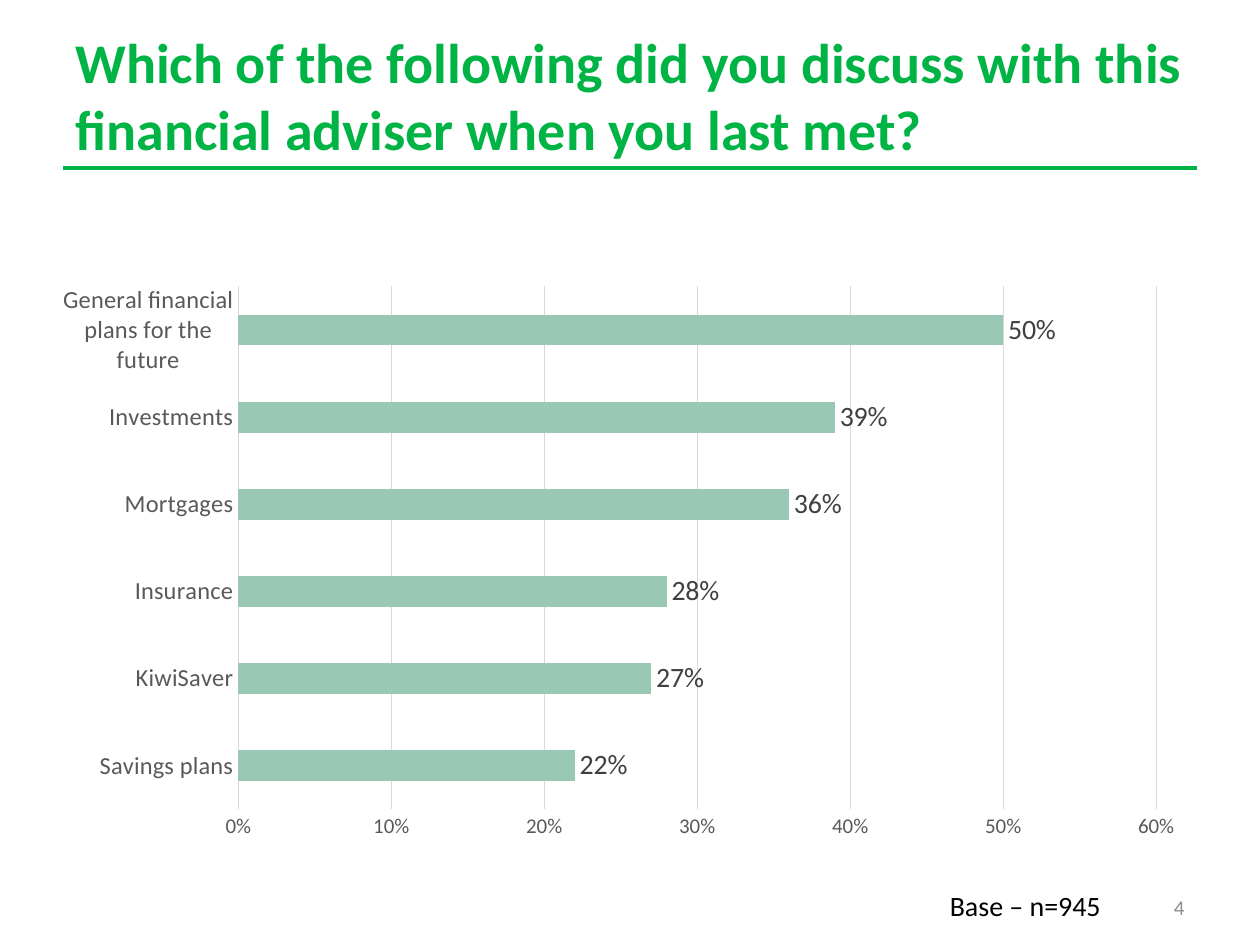
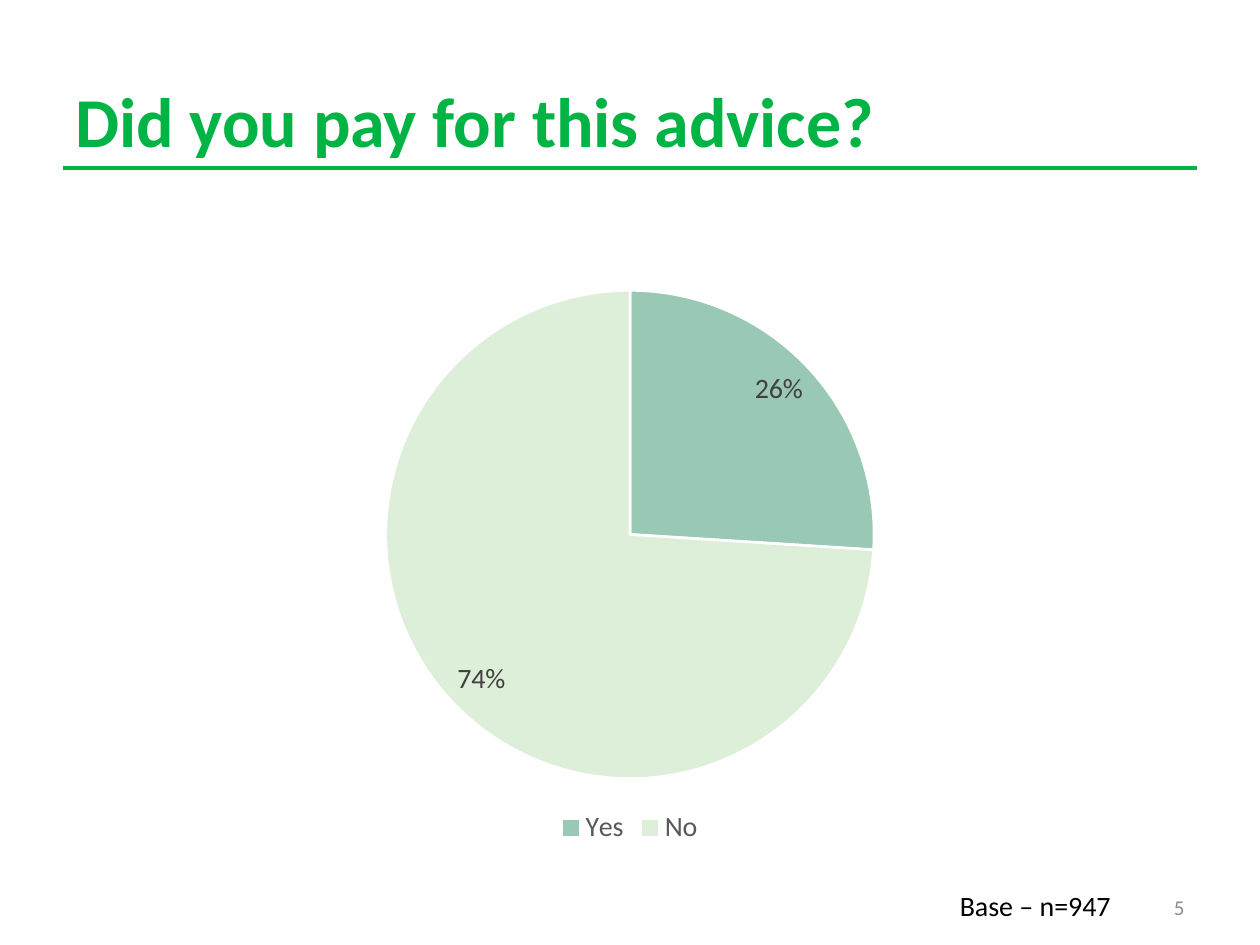
from dataclasses import dataclass

from lxml import etree
from pptx import Presentation
from pptx.chart.data import CategoryChartData
from pptx.dml.color import RGBColor
from pptx.enum.chart import XL_CHART_TYPE, XL_LABEL_POSITION, XL_LEGEND_POSITION, XL_TICK_MARK
from pptx.enum.shapes import MSO_CONNECTOR
from pptx.enum.text import MSO_ANCHOR, MSO_AUTO_SIZE, PP_ALIGN
from pptx.oxml.ns import qn
from pptx.util import Pt

BAR, PIE = XL_CHART_TYPE.BAR_CLUSTERED, XL_CHART_TYPE.PIE
OUTSIDE_END, INSIDE_END = XL_LABEL_POSITION.OUTSIDE_END, XL_LABEL_POSITION.INSIDE_END
LEGEND_BOTTOM = XL_LEGEND_POSITION.BOTTOM
NO_TICK = XL_TICK_MARK.NONE
STRAIGHT = MSO_CONNECTOR.STRAIGHT
TOP, MIDDLE, BOTTOM = MSO_ANCHOR.TOP, MSO_ANCHOR.MIDDLE, MSO_ANCHOR.BOTTOM
LEFT, RIGHT = PP_ALIGN.LEFT, PP_ALIGN.RIGHT
GROW = MSO_AUTO_SIZE.SHAPE_TO_FIT_TEXT


@dataclass(frozen=True)
class Theme:
    font: str = "Calibri"
    green: str = "00B345"
    sage: str = "99C8B4"
    mint: str = "DDEED9"
    grid: str = "D9D9D9"
    axis_text: str = "595959"
    label_text: str = "404040"
    number_text: str = "8C8C8C"
    black: str = "000000"
    white: str = "FFFFFF"
    category_size: int = 14
    label_size: int = 16
    small_size: int = 12


THEME = Theme()
PERCENT = "0%"

# Boxes as left, top, width, height in points
TITLE_BOX = (36, 21.6, 648, 74.4)
CHART_BOX = (36, 156, 648, 330)
NUMBER_BOX = (516, 504, 168, 28.8)
BASE_TOP, BASE_WIDTH, BASE_HEIGHT = 504, 102, 26.6


def points(box):
    return [Pt(value) for value in box]


def set_attributes(target, formats):
    for name, value in formats.items():
        setattr(target, name, value)


def style_font(font, size, color, bold=False):
    set_attributes(font, {"name": THEME.font, "size": Pt(size), "bold": bold})
    font.color.rgb = RGBColor.from_string(color)


def style_line(line, color, width):
    line.color.rgb = RGBColor.from_string(color)
    line.width = Pt(width)


def fill_solid(fill, color):
    fill.solid()
    fill.fore_color.rgb = RGBColor.from_string(color)


def add_text(slide, box, text, size, color, bold=False, align=LEFT, **frame_formats):
    frame = slide.shapes.add_textbox(*points(box)).text_frame
    set_attributes(frame, {"word_wrap": True, "vertical_anchor": TOP, **frame_formats})
    paragraph = frame.paragraphs[0]
    paragraph.alignment = align
    run = paragraph.add_run()
    run.text = text
    style_font(run.font, size, color, bold)


def add_header(slide, box, title, size):
    """Green title standing on a rule along the bottom of its box."""
    left, top, width, height = box
    rule = slide.shapes.add_connector(
        STRAIGHT, *points((left, top + height, left + width, top + height)))
    style_line(rule.line, THEME.green, 2.5)
    etree.SubElement(rule._element.spPr, qn("a:effectLst"))
    add_text(slide, box, title, size, THEME.green, bold=True, vertical_anchor=BOTTOM)


def add_footer(slide, number, base, base_left):
    """Slide number at the right, sample base beside it."""
    add_text(slide, NUMBER_BOX, str(number), THEME.small_size, THEME.number_text,
             align=RIGHT, vertical_anchor=MIDDLE)
    add_text(slide, (base_left, BASE_TOP, BASE_WIDTH, BASE_HEIGHT), base,
             THEME.label_size, THEME.black, word_wrap=False, auto_size=GROW)


def add_percent_chart(slide, box, kind, shares, label_position):
    """Chart of one series of shares, with a percentage on each."""
    data = CategoryChartData(number_format=PERCENT)
    data.categories = list(shares)
    data.add_series("Series 1", list(shares.values()))
    chart = slide.shapes.add_chart(kind, *points(box), data).chart
    set_attributes(chart, {"has_title": False, "has_legend": False})
    style_font(chart.font, 10, THEME.black)
    plot = chart.plots[0]
    plot.has_data_labels = True
    set_attributes(plot.data_labels, {
        "show_value": True, "show_percentage": False, "number_format": PERCENT,
        "number_format_is_linked": False, "position": label_position})
    style_font(plot.data_labels.font, THEME.label_size, THEME.label_text)
    return chart


def add_bar_chart(slide, box, shares):
    chart = add_percent_chart(slide, box, BAR, shares, OUTSIDE_END)
    set_attributes(chart.plots[0], {"gap_width": 182, "vary_by_categories": False})
    fill_solid(chart.plots[0].series[0].format.fill, THEME.sage)

    # Axes
    no_ticks = {"major_tick_mark": NO_TICK, "minor_tick_mark": NO_TICK}
    category_axis, value_axis = chart.category_axis, chart.value_axis
    set_attributes(category_axis, {**no_ticks, "has_major_gridlines": False})
    style_font(category_axis.tick_labels.font, THEME.category_size, THEME.axis_text)
    style_line(category_axis.format.line, THEME.grid, 0.75)
    set_attributes(value_axis, {**no_ticks, "has_major_gridlines": True,
                                "minimum_scale": 0, "maximum_scale": 0.6, "major_unit": 0.1})
    style_font(value_axis.tick_labels.font, THEME.small_size, THEME.axis_text)
    set_attributes(value_axis.tick_labels,
                   {"number_format": PERCENT, "number_format_is_linked": False})
    value_axis.format.line.fill.background()
    style_line(value_axis.major_gridlines.format.line, THEME.grid, 0.75)


def add_pie_chart(slide, box, shares):
    chart = add_percent_chart(slide, box, PIE, shares, INSIDE_END)
    series = chart.plots[0].series[0]
    for index, color in enumerate((THEME.sage, THEME.mint)):
        slice_format = series.points[index].format
        fill_solid(slice_format.fill, color)
        style_line(slice_format.line, THEME.white, 1.5)

    # Legend
    chart.has_legend = True
    set_attributes(chart.legend, {"position": LEGEND_BOTTOM, "include_in_layout": False})
    style_font(chart.legend.font, THEME.label_size, THEME.axis_text)


def add_question_slide(presentation, number, title, title_size, add_chart, shares,
                       base, base_left):
    slide = presentation.slides.add_slide(presentation.slide_layouts[6])
    add_header(slide, TITLE_BOX, title, title_size)
    add_chart(slide, CHART_BOX, shares)
    add_footer(slide, number, base, base_left)


def main():
    presentation = Presentation()
    set_attributes(presentation, {"slide_width": Pt(720), "slide_height": Pt(540)})

    # Topics discussed, listed from the bottom bar up
    topics = {"Savings plans": 0.22, "KiwiSaver": 0.27, "Insurance": 0.28,
              "Mortgages": 0.36, "Investments": 0.39,
              "General financial plans for the future": 0.5}
    add_question_slide(
        presentation, 4,
        "Which of the following did you discuss with this financial adviser when you last met?",
        32, add_bar_chart, topics, "Base – n=945", 535.7)

    # Paid advice
    add_question_slide(presentation, 5, "Did you pay for this advice?", 40,
                       add_pie_chart, {"Yes": 0.26, "No": 0.74}, "Base – n=947", 541.4)

    presentation.save("out.pptx")


if __name__ == "__main__":
    main()
